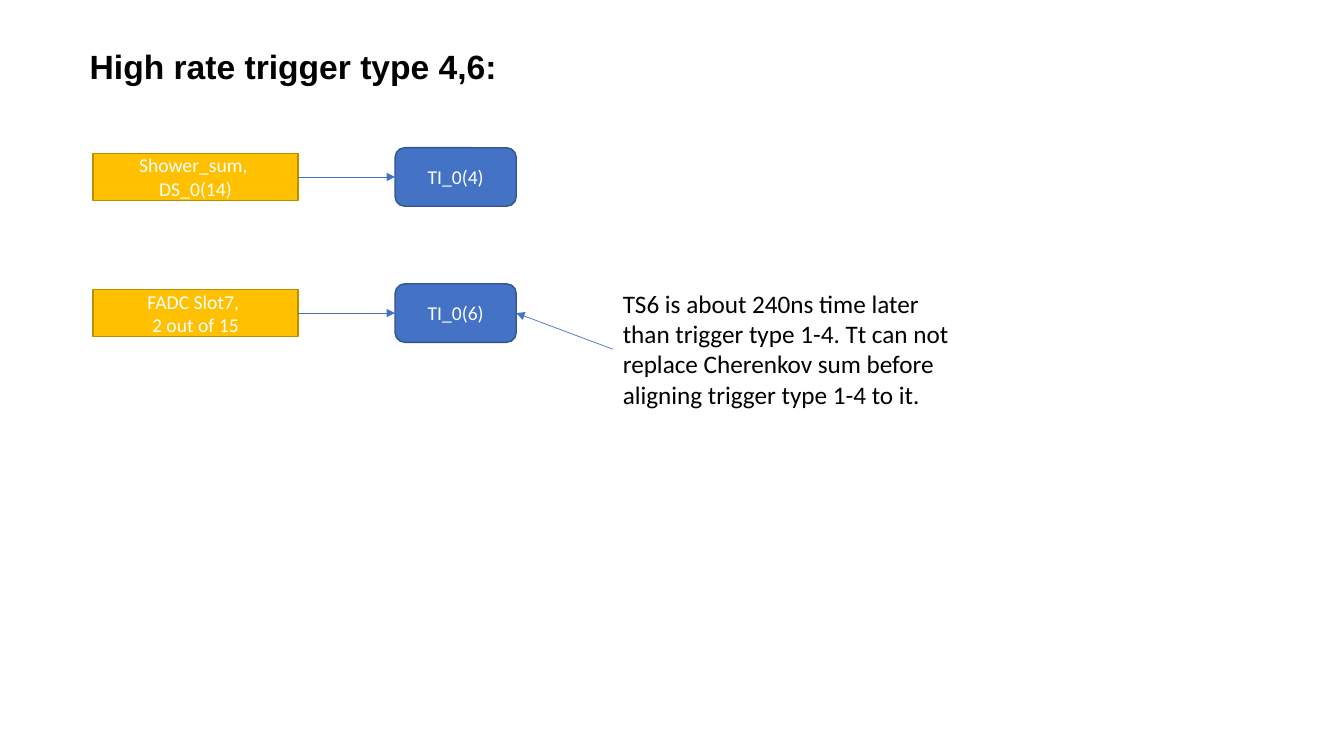
from dataclasses import dataclass

from lxml import etree
from pptx import Presentation
from pptx.dml.color import RGBColor
from pptx.enum.shapes import MSO_CONNECTOR, MSO_SHAPE
from pptx.enum.text import MSO_ANCHOR, MSO_AUTO_SIZE, PP_ALIGN
from pptx.oxml.ns import qn
from pptx.util import Pt

STRAIGHT = MSO_CONNECTOR.STRAIGHT
RECTANGLE = MSO_SHAPE.RECTANGLE
ROUNDED = MSO_SHAPE.ROUNDED_RECTANGLE
TOP, MIDDLE = MSO_ANCHOR.TOP, MSO_ANCHOR.MIDDLE
LEFT, CENTER = PP_ALIGN.LEFT, PP_ALIGN.CENTER
NO_AUTOFIT = MSO_AUTO_SIZE.NONE
LEFT_SIDE, RIGHT_SIDE = 1, 3


@dataclass(frozen=True)
class Theme:
    black: RGBColor = RGBColor.from_string("000000")
    white: RGBColor = RGBColor.from_string("FFFFFF")
    amber: RGBColor = RGBColor.from_string("FFC000")
    amber_edge: RGBColor = RGBColor.from_string("BD8E00")
    blue: RGBColor = RGBColor.from_string("4472C4")
    blue_edge: RGBColor = RGBColor.from_string("325491")
    title_font: str = "Arial"
    body_font: str = "Calibri"
    title_size: int = 24
    note_size: int = 18
    box_size: int = 14


theme = Theme()


def write(shape, lines, font, size, color, align, anchor, bold=False):
    frame = shape.text_frame
    frame.text = "\n".join(lines)
    frame.word_wrap = True
    frame.auto_size = NO_AUTOFIT
    frame.vertical_anchor = anchor
    for paragraph in frame.paragraphs:
        paragraph.alignment = align
        for run in paragraph.runs:
            run.font.name = font
            run.font.size = Pt(size)
            run.font.bold = bold
            run.font.color.rgb = color


def join(slide, start, start_side, end, end_side):
    arrow = slide.shapes.add_connector(STRAIGHT, 0, 0, 0, 0)
    arrow.begin_connect(start, start_side)
    arrow.end_connect(end, end_side)
    arrow.line.color.rgb = theme.blue
    arrow.line.width = Pt(0.5)
    etree.SubElement(arrow.line._get_or_add_ln(), qn("a:tailEnd"), type="triangle")
    etree.SubElement(arrow._element.spPr, qn("a:effectLst"))


presentation = Presentation()
presentation.slide_width = Pt(960)
presentation.slide_height = Pt(540)
slide = presentation.slides.add_slide(presentation.slide_layouts[5])

title = slide.shapes.title
title.left, title.top, title.width, title.height = Pt(56.9), Pt(29.5), Pt(877), Pt(54)
write(title, ["High rate trigger type 4,6:"], theme.title_font, theme.title_size,
      theme.black, LEFT, TOP, bold=True)

first_row, row_pitch = 126.4, 97.2
columns = [
    (RECTANGLE, 66.4, 146.6, 33.4, theme.amber, theme.amber_edge),
    (ROUNDED, 282.2, 86.6, 41.8, theme.blue, theme.blue_edge),
]
trigger_rows = [
    (["Shower_sum, ", "DS_0(14)"], ["TI_0(4)"]),
    (["FADC Slot7, ", "2 out of 15"], ["TI_0(6)"]),
]
for row, labels in enumerate(trigger_rows):
    middle = first_row + row * row_pitch
    boxes = []
    for (kind, left, width, height, fill, edge), lines in zip(columns, labels):
        box = slide.shapes.add_shape(
            kind, Pt(left), Pt(middle - height / 2), Pt(width), Pt(height))
        box.shadow.inherit = False
        box.fill.solid()
        box.fill.fore_color.rgb = fill
        box.line.color.rgb = edge
        box.line.width = Pt(1)
        write(box, lines, theme.body_font, theme.box_size, theme.white, CENTER, MIDDLE)
        boxes.append(box)
    source_box, trigger_box = boxes
    join(slide, source_box, RIGHT_SIDE, trigger_box, LEFT_SIDE)

note = slide.shapes.add_textbox(Pt(437.8), Pt(202.3), Pt(254.2), Pt(94.3))
write(note, ["TS6 is about 240ns time later than trigger type 1-4. Tt can not replace "
             "Cherenkov sum before aligning trigger type 1-4 to it."],
      theme.body_font, theme.note_size, theme.black, LEFT, TOP)
join(slide, note, LEFT_SIDE, trigger_box, RIGHT_SIDE)

presentation.save("out.pptx")
